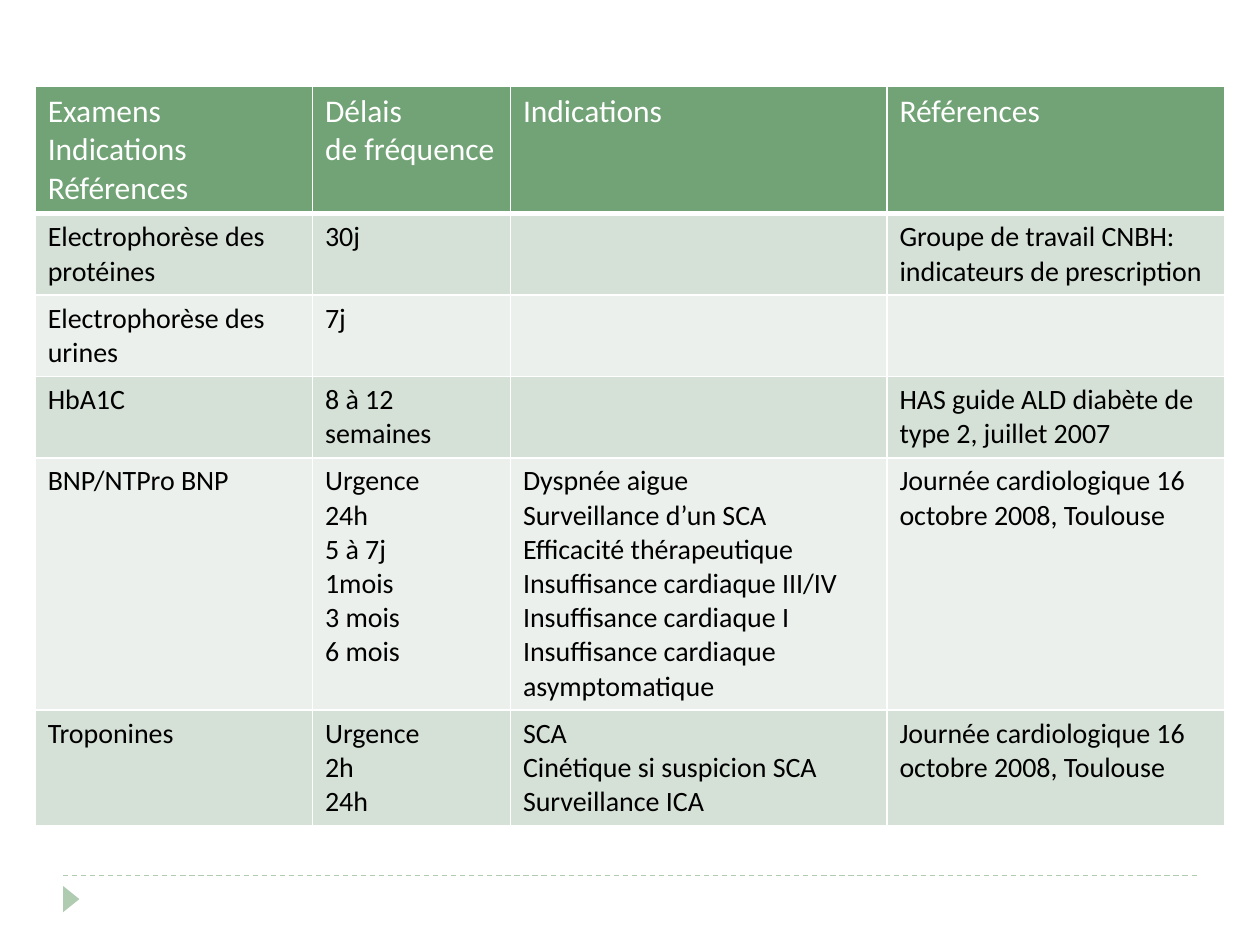
from lxml.etree import SubElement
from pptx import Presentation
from pptx.dml.color import RGBColor
from pptx.enum.dml import MSO_LINE_DASH_STYLE as Dash
from pptx.enum.shapes import MSO_CONNECTOR as Connector, MSO_SHAPE as Shape
from pptx.oxml.ns import qn
from pptx.util import Cm, Pt

COLORS = {
    "header": "72A376",
    "odd_row": "D5E0D6",
    "even_row": "EBF0EC",
    "accent": "B0CCB0",
    "white": "FFFFFF",
    "black": "000000",
}
FONT = "Calibri"
COLUMN_WIDTHS = [5.59, 3.99, 7.59, 6.81]
ROW_HEIGHTS = [2.58, 1.64, 1.64, 1.64, 5.08, 2.32]

CARDIOLOGY_DAY = "Journée cardiologique 16 octobre 2008, Toulouse"
EXAMS = [
    ["Examens Indications Références", "Délais\nde fréquence",
     "Indications", "Références"],
    ["Electrophorèse des protéines", "30j", "",
     "Groupe de travail CNBH: indicateurs de prescription"],
    ["Electrophorèse des urines", "7j", "", ""],
    ["HbA1C", "8 à 12 semaines", "",
     "HAS guide ALD diabète de type 2, juillet 2007"],
    ["BNP/NTPro BNP",
     "Urgence\n24h\n5 à 7j\n1mois\n3 mois\n6 mois",
     "Dyspnée aigue\nSurveillance d’un SCA\nEfficacité thérapeutique\n"
     "Insuffisance cardiaque III/IV\nInsuffisance cardiaque I\n"
     "Insuffisance cardiaque asymptomatique",
     CARDIOLOGY_DAY],
    ["Troponines", "Urgence\n2h\n24h",
     "SCA\nCinétique si suspicion SCA\nSurveillance ICA", CARDIOLOGY_DAY],
]


def rgb(name):
    return RGBColor.from_string(COLORS[name])


def write_text(frame, text, size=16, color="black"):
    frame.text = text
    for paragraph in frame.paragraphs:
        paragraph.font.size = Pt(size)
        for run in paragraph.runs:
            run.font.name = FONT
            run.font.size = Pt(size)
            run.font.bold = False
            run.font.color.rgb = rgb(color)


def set_borders(cell, widths):
    """Draw white borders; they must come before the fill in the cell XML."""
    properties = cell._tc.get_or_add_tcPr()
    for side, width in widths.items():
        border = SubElement(properties, qn(f"a:ln{side}"), w=str(Pt(width)))
        fill = SubElement(border, qn("a:solidFill"))
        SubElement(fill, qn("a:srgbClr"), val=COLORS["white"])


def add_footer_rule(slide):
    rule = slide.shapes.add_connector(
        Connector.STRAIGHT, Cm(1.27), Cm(17.65), Cm(24.13), Cm(17.65))
    rule.line.color.rgb = rgb("accent")
    rule.line.width = Pt(0.75)
    rule.line.dash_style = Dash.DASH
    SubElement(rule._element.spPr, qn("a:effectLst"))


def add_footer_marker(slide):
    marker = slide.shapes.add_shape(
        Shape.ISOSCELES_TRIANGLE, Cm(1.17), Cm(17.96), Cm(0.53), Cm(0.33))
    marker.rotation = 90
    marker.shadow.inherit = False
    marker.fill.solid()
    marker.fill.fore_color.rgb = rgb("accent")
    marker.line.fill.background()


def add_exam_table(slide):
    table = slide.shapes.add_table(
        len(EXAMS), len(COLUMN_WIDTHS), Cm(0.71), Cm(1.73),
        Cm(sum(COLUMN_WIDTHS)), Cm(sum(ROW_HEIGHTS))).table
    for column, width in zip(table.columns, COLUMN_WIDTHS):
        column.width = Cm(width)
    for row, height in zip(table.rows, ROW_HEIGHTS):
        row.height = Cm(height)

    for r, exam in enumerate(EXAMS):
        is_header = r == 0
        band = "header" if is_header else "odd_row" if r % 2 else "even_row"
        widths = {"L": 1, "R": 1, "T": 3 if r == 1 else 1,
                  "B": 3 if is_header else 1}
        for c, text in enumerate(exam):
            cell = table.cell(r, c)
            set_borders(cell, widths)
            cell.fill.solid()
            cell.fill.fore_color.rgb = rgb(band)
            write_text(cell.text_frame, text, size=18 if is_header else 16,
                       color="white" if is_header else "black")


def main():
    deck = Presentation()
    deck.slide_width, deck.slide_height = Cm(25.4), Cm(19.05)
    # The slide has no title, so it uses the blank layout
    slide = deck.slides.add_slide(deck.slide_layouts[6])

    # Footer decoration
    add_footer_rule(slide)
    add_footer_marker(slide)

    # Table of exams
    add_exam_table(slide)
    deck.save("out.pptx")


if __name__ == "__main__":
    main()
